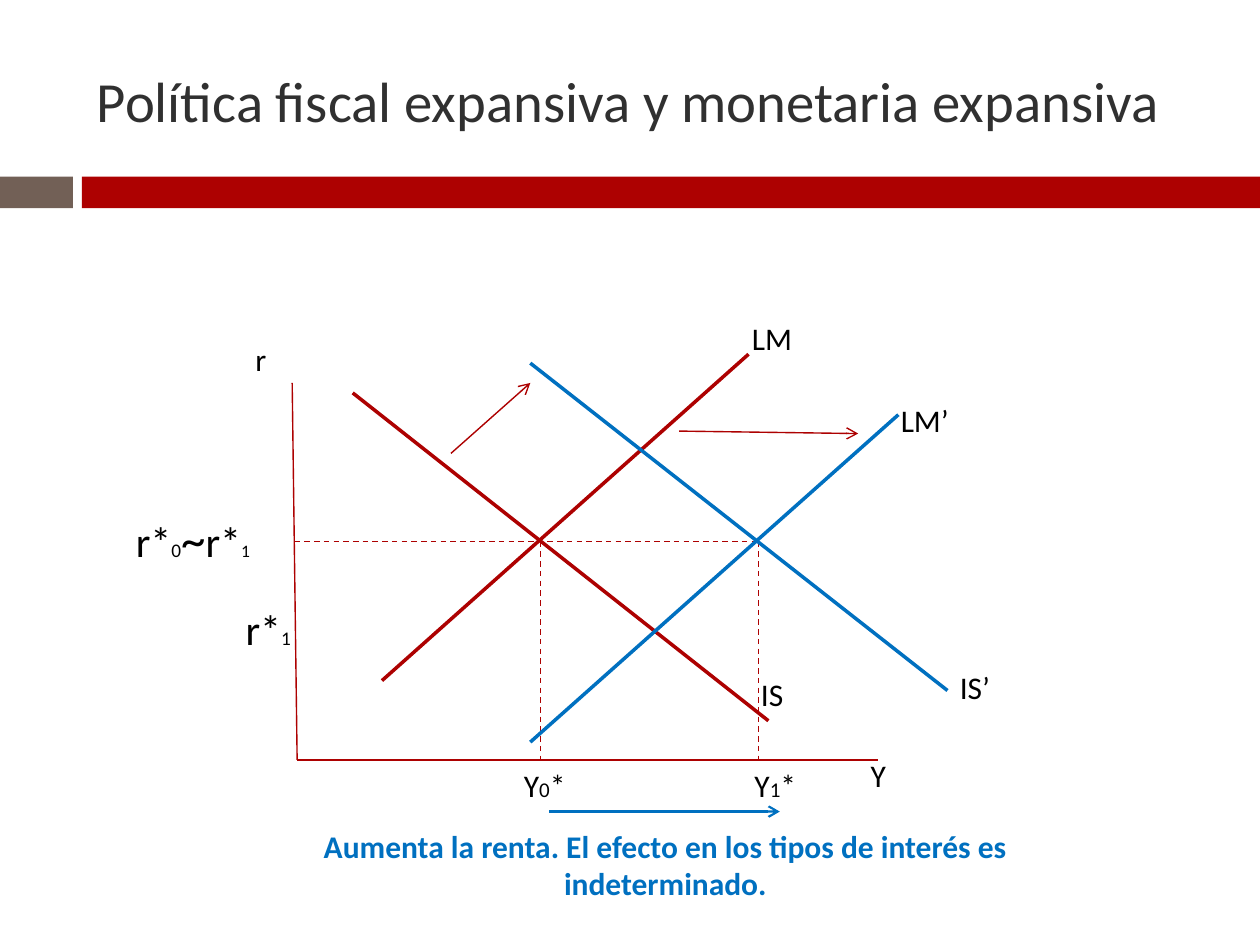
import pptx
import pptx.util
import pptx.dml.color
import pptx.enum.dml
import pptx.enum.shapes
import pptx.enum.text
import pptx.oxml.ns
import lxml.etree

Cm = pptx.util.Cm
Pt = pptx.util.Pt
RGBColor = pptx.dml.color.RGBColor

RED = RGBColor(0xAD, 0x01, 0x01)
BLUE = RGBColor(0x00, 0x70, 0xC0)
TAUPE = RGBColor(0x72, 0x60, 0x56)
DARK = RGBColor(0x30, 0x30, 0x30)
BLACK = RGBColor(0x00, 0x00, 0x00)

FONT = "Calibri"
THIN, MEDIUM, THICK = 0.79, 1.25, 2

# Equilibrium coordinates in cm
AXIS_Y = 15.32
RATE_Y = 10.92
INCOME_0, INCOME_1 = 10.9, 15.29


def format_run(r, size, color, bold=False):
    r.font.name = FONT
    r.font.size = Pt(size)
    r.font.color.rgb = color
    r.font.bold = bold


def add_title(s, text):
    sp = s.shapes.title
    sp.left, sp.top, sp.width, sp.height = Cm(1.7), Cm(0.64), Cm(22.66), Cm(2.74)
    tf = sp.text_frame
    tf.text = text
    tf.auto_size = pptx.enum.text.MSO_AUTO_SIZE.NONE
    tf.vertical_anchor = pptx.enum.text.MSO_ANCHOR.MIDDLE
    p = tf.paragraphs[0]
    p.alignment = pptx.enum.text.PP_ALIGN.LEFT
    format_run(p.runs[0], 32.4, DARK)


def add_bar(s, left, width, color):
    sp = s.shapes.add_shape(pptx.enum.shapes.MSO_SHAPE.RECTANGLE,
                            Cm(left), Cm(3.56), Cm(width), Cm(0.64))
    sp.shadow.inherit = False
    sp.fill.solid()
    sp.fill.fore_color.rgb = color
    sp.line.fill.background()


def add_line(s, start, end, color=RED, width=THIN, dashed=False, arrow=False):
    sp = s.shapes.add_connector(pptx.enum.shapes.MSO_CONNECTOR.STRAIGHT,
                                Cm(start[0]), Cm(start[1]), Cm(end[0]), Cm(end[1]))
    sp.line.color.rgb = color
    sp.line.width = Pt(width)
    if dashed:
        sp.line.dash_style = pptx.enum.dml.MSO_LINE.DASH
    qn = pptx.oxml.ns.qn
    if arrow:
        ln = sp.line._get_or_add_ln()
        lxml.etree.SubElement(ln, qn("a:tailEnd"), type="arrow")
    lxml.etree.SubElement(sp._element.spPr, qn("a:effectLst"))


def add_label(s, left, top, width, runs, height=1.02, color=BLACK, bold=False,
              align=pptx.enum.text.PP_ALIGN.LEFT):
    sp = s.shapes.add_textbox(Cm(left), Cm(top), Cm(width), Cm(height))
    tf = sp.text_frame
    tf.word_wrap = True
    p = tf.paragraphs[0]
    p.alignment = align
    for text, size in runs:
        r = p.add_run()
        r.text = text
        format_run(r, size, color, bold)


def add_lines(s):
    # Axes
    origin = (5.99, AXIS_Y)
    add_line(s, (5.89, 7.72), origin)
    add_line(s, origin, (17.7, AXIS_Y))

    # Guides to the equilibrium points
    add_line(s, (5.94, RATE_Y), (INCOME_1, RATE_Y), dashed=True)
    for x in (INCOME_0, INCOME_1):
        add_line(s, (x, RATE_Y), (x, AXIS_Y), dashed=True)

    # LM and IS curves before and after the policy
    for start, end, color in (
        ((7.7, 13.72), (15.09, 7.14), RED),
        ((7.11, 7.92), (15.49, 14.53), RED),
        ((10.69, 14.96), (18.11, 8.36), BLUE),
        ((10.69, 7.32), (19.1, 13.92), BLUE),
    ):
        add_line(s, start, end, color, THICK)

    # Shift arrows: LM, IS and income
    add_line(s, (13.69, 8.69), (17.3, 8.74), arrow=True)
    add_line(s, (9.09, 9.14), (10.69, 7.72), arrow=True)
    add_line(s, (11.07, 16.36), (15.72, 16.36), BLUE, MEDIUM, arrow=True)


def add_labels(s):
    # Curve and axis names
    for text, left, top, width in (
        ("LM", 14.91, 6.3, 3.4),
        ("LM’", 17.91, 7.95, 3.4),
        ("IS", 15.09, 13.49, 3.4),
        ("IS’", 19.1, 13.34, 1.7),
        ("r", 4.9, 6.73, 2.39),
        ("Y", 17.3, 15.11, 2.39),
    ):
        add_label(s, left, top, width, [(text, 18)])

    # Equilibrium incomes and interest rates
    for index, left in (("0", 10.31), ("1", 14.96)):
        add_label(s, left, AXIS_Y, 1.55, [("Y", 18), (index, 12), ("*", 18)])
    add_label(s, 2.49, 10.13, 3.81,
              [("r*", 24), ("0", 11), ("~", 28), ("r*", 24), ("1", 10)], height=2.24)
    add_label(s, 4.7, 12.04, 1.8, [("r*", 24), ("1", 11)], height=1.27)

    # Conclusion
    add_label(s, 5.11, 16.54, 16.61,
              [("Aumenta la renta. El efecto en los tipos de interés es indeterminado.", 18)],
              height=1.8, color=BLUE, bold=True, align=pptx.enum.text.PP_ALIGN.CENTER)


def main():
    prs = pptx.Presentation()
    prs.slide_width, prs.slide_height = Cm(25.4), Cm(19.05)
    s = prs.slides.add_slide(prs.slide_layouts.get_by_name("Title Only"))

    # Header
    add_bar(s, 0, 1.47, TAUPE)
    add_bar(s, 1.65, 23.75, RED)
    add_title(s, "Política fiscal expansiva y monetaria expansiva")

    # IS-LM diagram
    add_lines(s)
    add_labels(s)
    prs.save("out.pptx")


if __name__ == "__main__":
    main()
